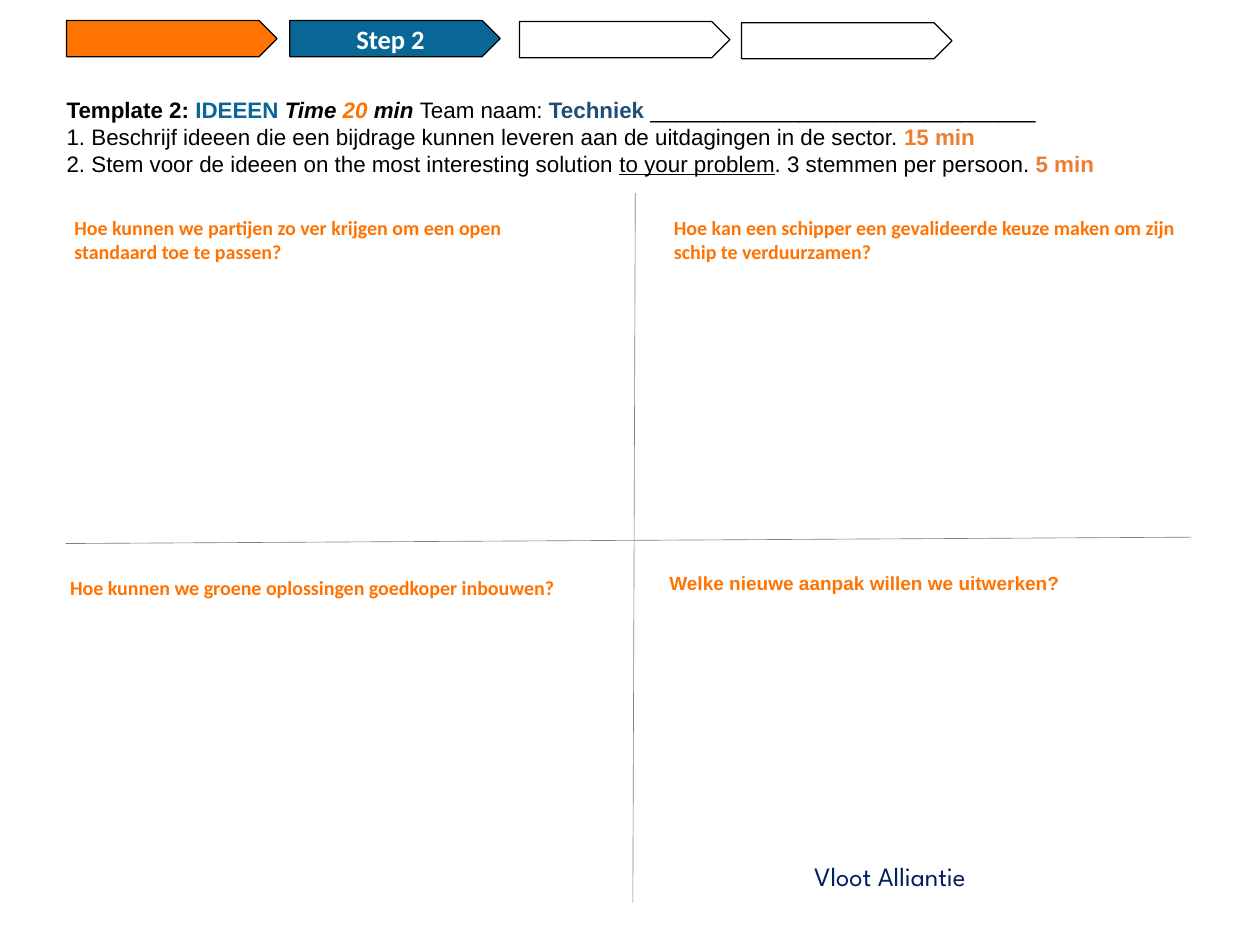
from lxml.etree import SubElement
from pptx import Presentation
from pptx.dml.color import RGBColor
from pptx.enum.shapes import MSO_CONNECTOR as CONN, MSO_SHAPE as SHAPE
from pptx.enum.text import MSO_ANCHOR as ANCHOR, PP_ALIGN as ALIGN
from pptx.oxml.ns import qn
from pptx.util import Cm, Pt

BLACK = RGBColor(0x00, 0x00, 0x00)
WHITE = RGBColor(0xFF, 0xFF, 0xFF)
ORANGE = RGBColor(0xFF, 0x73, 0x03)
AMBER = RGBColor(0xED, 0x7D, 0x31)
TEAL = RGBColor(0x08, 0x67, 0x95)
BLUE = RGBColor(0x1F, 0x4E, 0x79)
NAVY = RGBColor(0x00, 0x20, 0x60)
GRAY = RGBColor(0x80, 0x80, 0x80)


def add_run(p, text, size, font, color, style=""):
    r = p.add_run()
    r.text = text
    r.font.size = Pt(size)
    r.font.name = font
    r.font.color.rgb = color
    r.font.bold = "b" in style
    r.font.italic = "i" in style
    r.font.underline = "u" in style


def add_text(s, x, y, w, h, paragraphs, size, font):
    tf = s.shapes.add_textbox(Cm(x), Cm(y), Cm(w), Cm(h)).text_frame
    tf.word_wrap = True
    for i, runs in enumerate(paragraphs):
        p = tf.paragraphs[0] if i == 0 else tf.add_paragraph()
        for text, color, style in runs:
            add_run(p, text, size, font, color, style)


def add_line(s, x1, y1, x2, y2):
    line = s.shapes.add_connector(CONN.STRAIGHT, Cm(x1), Cm(y1), Cm(x2), Cm(y2))
    line.line.color.rgb = GRAY
    line.line.width = Pt(0.5)
    SubElement(line._element.spPr, qn("a:effectLst"))


def add_steps(s, x, y, w, h):
    steps = [
        (0, 0, ORANGE, ""),
        (6.3, 0, TEAL, "Step 2"),
        (12.78, 0.03, None, ""),
        (19.05, 0.06, None, ""),
    ]
    group = s.shapes.add_group_shape()
    for dx, dy, color, label in steps:
        sp = group.shapes.add_shape(SHAPE.PENTAGON, Cm(x + dx), Cm(y + dy), Cm(w), Cm(h))
        sp.shadow.inherit = False
        sp.line.color.rgb = BLACK
        sp.line.width = Pt(1)
        if color is None:
            sp.fill.background()
        else:
            sp.fill.solid()
            sp.fill.fore_color.rgb = color
        if label:
            tf = sp.text_frame
            tf.vertical_anchor = ANCHOR.MIDDLE
            p = tf.paragraphs[0]
            p.alignment = ALIGN.CENTER
            add_run(p, label, 21.2, "Calibri", WHITE, "b")


def add_header(s, x, y, w, h):
    paragraphs = [
        [
            ("Template 2: ", BLACK, "b"),
            ("IDEEEN ", TEAL, "b"),
            ("Time ", BLACK, "bi"),
            ("20", ORANGE, "bi"),
            (" min ", BLACK, "bi"),
            ("Team naam: ", BLACK, ""),
            ("Techniek", BLUE, "b"),
            (" " + "_" * 31, BLACK, ""),
        ],
        [
            ("1. Beschrijf ideeen die een bijdrage kunnen leveren aan de uitdagingen in de sector. ", BLACK, ""),
            ("15 min", AMBER, "b"),
        ],
        [
            ("2. Stem voor de ideeen on the most interesting solution ", BLACK, ""),
            ("to your problem", BLACK, "u"),
            (". 3 stemmen per persoon. ", BLACK, ""),
            ("5 min", AMBER, "b"),
        ],
    ]
    add_text(s, x, y, w, h, paragraphs, 17.9, "Arial")


def add_quadrants(s, x, y, w, h):
    add_line(s, x + 16.08, y, x + 16.01, y + h)
    add_line(s, x, y + 9.9, x + w, y + 9.72)
    questions = [
        (0, 0.53, 1.63, "Hoe kunnen we partijen zo ver krijgen om een open standaard toe te passen?", 16, "Calibri"),
        (16.92, 0.53, 2.31, "Hoe kan een schipper een gevalideerde keuze maken om zijn schip te verduurzamen?", 16, "Calibri"),
        (-0.12, 10.69, 0.94, "Hoe kunnen we groene oplossingen goedkoper inbouwen?", 16, "Calibri"),
        (16.79, 10.56, 0.91, "Welke nieuwe aanpak willen we uitwerken?", 15.2, "Arial"),
    ]
    for dx, dy, height, text, size, font in questions:
        add_text(s, x + dx, y + dy, 14.68, height, [[(text, ORANGE, "b")]], size, font)


def add_footer(s, x, y, w, h):
    add_text(s, x, y, w, h, [[("Vloot Alliantie", NAVY, "")]], 21.2, "League Spartan")


def main():
    prs = Presentation()
    prs.slide_width = Cm(35.56)
    prs.slide_height = Cm(26.67)
    s = prs.slides.add_slide(prs.slide_layouts[6])
    add_header(s, 1.63, 2.59, 32.79, 3.33)
    add_quadrants(s, 1.85, 5.44, 31.78, 20.04)
    add_steps(s, 1.88, 0.58, 5.94, 1.02)
    add_footer(s, 22.73, 24.16, 7.32, 1.17)
    prs.save("out.pptx")


if __name__ == "__main__":
    main()
